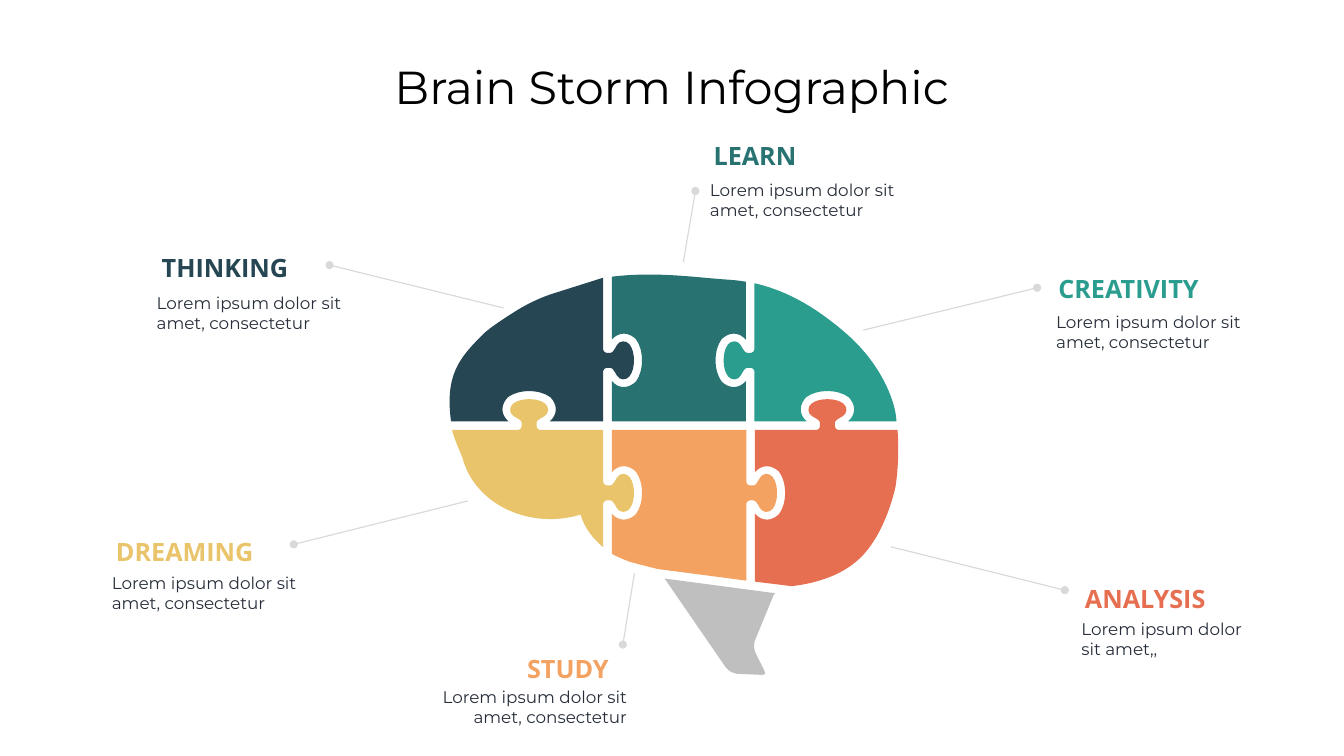
from lxml import etree
from pptx import Presentation
from pptx.dml.color import RGBColor
from pptx.enum.shapes import MSO_CONNECTOR, MSO_SHAPE
from pptx.enum.text import MSO_ANCHOR, PP_ALIGN
from pptx.oxml.ns import qn
from pptx.util import Inches, Pt

LEFT, CENTER, RIGHT = PP_ALIGN.LEFT, PP_ALIGN.CENTER, PP_ALIGN.RIGHT
MIDDLE = MSO_ANCHOR.MIDDLE
STRAIGHT, OVAL = MSO_CONNECTOR.STRAIGHT, MSO_SHAPE.OVAL

COLORS = {
    "thinking": "264653", "learn": "287271", "creativity": "2A9D8F",
    "dreaming": "E9C46A", "study": "F4A261", "analysis": "E76F51",
    "stem": "BFBFBF", "leader": "D9D9D9", "body": "272E3A", "title": "000000",
}
DOT = 0.16
LOREM = "Lorem ipsum dolor sit amet, consectetur"

TAB = [(0, .21), (.01, .18), (.03, .15), (.06, .15), (.12, .14), (.18, .14), (.21, .2),
       (.24, .23), (.24, .26), (.27, .3), (.33, .4), (.45, .4), (.52, .32),
       (.59, .23), (.61, .11), (.61, 0)]
SOCKET = [(0, .41), (.06, .48), (.14, .53), (.24, .53), (.33, .53), (.42, .48), (.48, .42),
          (.56, .31), (.6, .16), (.6, 0)]
UP, DOWN, BACK, AHEAD = (0, -1), (0, 1), (-1, 0), (1, 0)


def knob(half, x, y, depth, start):
    """Return a symmetric puzzle knob at a seam, growing along depth, beginning on the start side."""
    profile = half + [(d, -o) for d, o in reversed(half[:-1])]
    pts = [(x + d * depth[0] + o * start[0], y + d * depth[1] + o * start[1])
           for d, o in profile]
    return [pts[0], pts[1:]]


PIECES = {
    "study": [(4.14, 3.53), (6.81, 3.53), *knob(TAB, 6.81, 4.78, AHEAD, UP),
              (6.81, 6.52), (5.05, 6.29),
              [(5.05, 6.29), (4.77, 6.22), (4.58, 6.17), (4.41, 6.13), (4.14, 5.99), (4.14, 5.99)],
              *knob(SOCKET, 4.14, 4.78, AHEAD, DOWN)],
    "analysis": [(6.98, 3.53), *knob(TAB, 8.42, 3.53, UP, BACK), (9.81, 3.53),
                 [(9.86, 4.14), (9.77, 4.66), (9.77, 4.66), (9.77, 4.66), (9.59, 5.55), (9.09, 6.05),
                  (8.69, 6.46), (8.07, 6.59), (7.71, 6.63)],
                 (6.98, 6.54), *knob(SOCKET, 6.98, 4.78, AHEAD, DOWN)],
    "learn": [(4.14, .49), *knob(SOCKET, 4.14, 2.15, AHEAD, UP), (4.14, 3.36), (6.8, 3.36),
              *knob(SOCKET, 6.8, 2.15, BACK, DOWN), (6.8, .59),
              [(6.63, .56), (6.47, .55), (6.32, .54), (5.69, .49), (4.96, .39), (4.14, .49)]],
    "creativity": [(6.97, .62), *knob(TAB, 6.97, 2.15, BACK, UP), (6.97, 3.36),
                   *knob(SOCKET, 8.42, 3.36, UP, BACK), (9.79, 3.36),
                   [(9.79, 3.31), (9.78, 3.25), (9.77, 3.19), (9.73, 2.95), (9.51, 2.23), (8.76, 1.59),
                    (8.05, .98), (7.46, .73), (6.97, .62)]],
    "stem": [(5.19, 6.48), (6.4, 8.24), [(6.46, 8.32), (6.55, 8.36), (6.64, 8.37)], (7.11, 8.39),
             [(7.18, 8.39), (7.2, 8.36), (7.18, 8.34), (7.15, 8.26), (7.07, 8.12), (7, 7.97),
              (6.96, 7.89), (6.95, 7.79), (6.98, 7.71)],
             (7.35, 6.81), (7.38, 6.77)],
    "dreaming": [(.97, 3.53), *knob(TAB, 2.5, 3.53, UP, BACK), (3.97, 3.53),
                 *knob(TAB, 3.97, 4.78, AHEAD, UP), (3.97, 5.86),
                 [(3.76, 5.68), (3.59, 5.46), (3.52, 5.21), (2.55, 5.51), (1.42, 5.04), (1.17, 4.06),
                  (1.17, 4.06), (1, 3.68), (.97, 3.53)]],
    "thinking": [(.95, 3.36), *knob(SOCKET, 2.5, 3.36, UP, BACK), (3.97, 3.36),
                 *knob(TAB, 3.97, 2.15, AHEAD, DOWN), (3.97, .51), (2.99, .82),
                 [(2.76, .89), (2.53, 1), (2.32, 1.12), (2.32, 1.12), (1.76, 1.46), (1.6, 1.62),
                  (1.1, 2.11), (.83, 2.45), (.95, 3.36)]],
}

CALLOUTS = [
    ("thinking", (3.01, 5.75, 4.64), (.2, -.74, 2.53), (9.99, 6.11), (6.54, 5.26), LOREM, LEFT),
    ("learn", (13.99, 3.52, 4.64), (.17, -.74, 1.66), (13.56, 5.2), (13.8, 3.79), LOREM, LEFT),
    ("creativity", (20.86, 6.13, 3.98), (.14, -.71, 2.81), (17.13, 6.55), (20.58, 5.71), LOREM, LEFT),
    ("dreaming", (2.12, 11.32, 4.64), (.18, -.67, 2.76), (9.28, 9.94), (5.83, 10.8), LOREM, LEFT),
    ("study", (7.9, 13.57, 4.64), (2.56, -.6, 1.64), (12.59, 11.37), (12.36, 12.79), LOREM, RIGHT),
    ("analysis", (21.36, 12.22, 3.48), (.17, -.65, 2.42), (17.68, 10.85), (21.13, 11.71),
     "Lorem ipsum dolor sit amet,,", LEFT),
]


def rgb(name):
    """Return the named colour."""
    return RGBColor.from_string(COLORS[name])


def paint(sp, name):
    """Give a shape a flat fill without line or shadow."""
    sp.shadow.inherit = False
    sp.fill.solid()
    sp.fill.fore_color.rgb = rgb(name)
    sp.line.fill.background()


def write(tf, text, font, size, color, align=LEFT, bold=False):
    """Fill a text frame with one formatted paragraph."""
    p = tf.paragraphs[0]
    p.text, p.alignment = text, align
    p.font.name, p.font.size, p.font.bold = font, Pt(size), bold
    p.font.color.rgb = rgb(color)


def add_outline(s, left, top, outline):
    """Build a freeform in which tuples are corners and lists are cubic Bézier points."""
    flat = []
    for part in outline:
        flat += [part] if isinstance(part, tuple) else part
    pts = [(Inches(left + x), Inches(top + y)) for x, y in flat]
    builder = s.shapes.build_freeform(*pts[0])
    builder.add_line_segments(pts[1:], close=True)
    sp = builder.convert_to_shape()
    segments = iter(list(sp._element.iter(qn("a:lnTo"))))
    for part in outline[1:]:
        if isinstance(part, tuple):
            next(segments)
            continue
        for _ in range(len(part) // 3):
            first, second, third = next(segments), next(segments), next(segments)
            curve = etree.Element(qn("a:cubicBezTo"))
            first.addprevious(curve)
            for segment in (first, second, third):
                curve.append(segment[0])
                segment.getparent().remove(segment)
    return sp


def add_title(s, left, top, width, height):
    """Place and format the title placeholder."""
    sp = s.shapes.title
    sp.left, sp.top, sp.width, sp.height = map(Inches, (left, top, width, height))
    sp.text_frame.vertical_anchor = MIDDLE
    write(sp.text_frame, "Brain Storm Infographic", "Montserrat", 66, "title", CENTER)


def add_brain(s, left, top):
    """Draw the puzzle brain and its stem from the given corner."""
    for name, outline in PIECES.items():
        paint(add_outline(s, left, top, outline), name)


def add_leader(s, start, end):
    """Draw a thin line that ends in a dot."""
    line = s.shapes.add_connector(STRAIGHT, *map(Inches, start + end))
    line.line.color.rgb = rgb("leader")
    line.line.width = Pt(1.63)
    etree.SubElement(line._element.spPr, qn("a:effectLst"))
    x, y = end
    paint(s.shapes.add_shape(OVAL, *map(Inches, (x - DOT / 2, y - DOT / 2, DOT, DOT))), "leader")


def add_callout(s, name, box, heading, start, end, text, align):
    """Add a leader, a coloured heading and a short text in the given box."""
    left, top, width = box
    dx, dy, heading_width = heading
    add_leader(s, start, end)
    tf = s.shapes.add_textbox(*map(Inches, (left + dx, top + dy, heading_width, .61))).text_frame
    tf.margin_left = tf.margin_right = tf.margin_top = tf.margin_bottom = 0
    tf.word_wrap = False
    write(tf, name.upper(), "Open Sans", 36, name, bold=True)
    tf = s.shapes.add_textbox(*map(Inches, (left, top, width, .91))).text_frame
    tf.word_wrap = True
    write(tf, text, "Montserrat", 24, "body", align)


def main():
    """Build and save the slide."""
    prs = Presentation()
    prs.slide_width, prs.slide_height = Inches(26.67), Inches(15)
    s = prs.slides.add_slide(prs.slide_layouts[5])
    add_title(s, 1.83, .8, 23, 1.82)
    for callout in CALLOUTS:
        add_callout(s, *callout)
    add_brain(s, 8, 5)
    prs.save("out.pptx")


if __name__ == "__main__":
    main()
